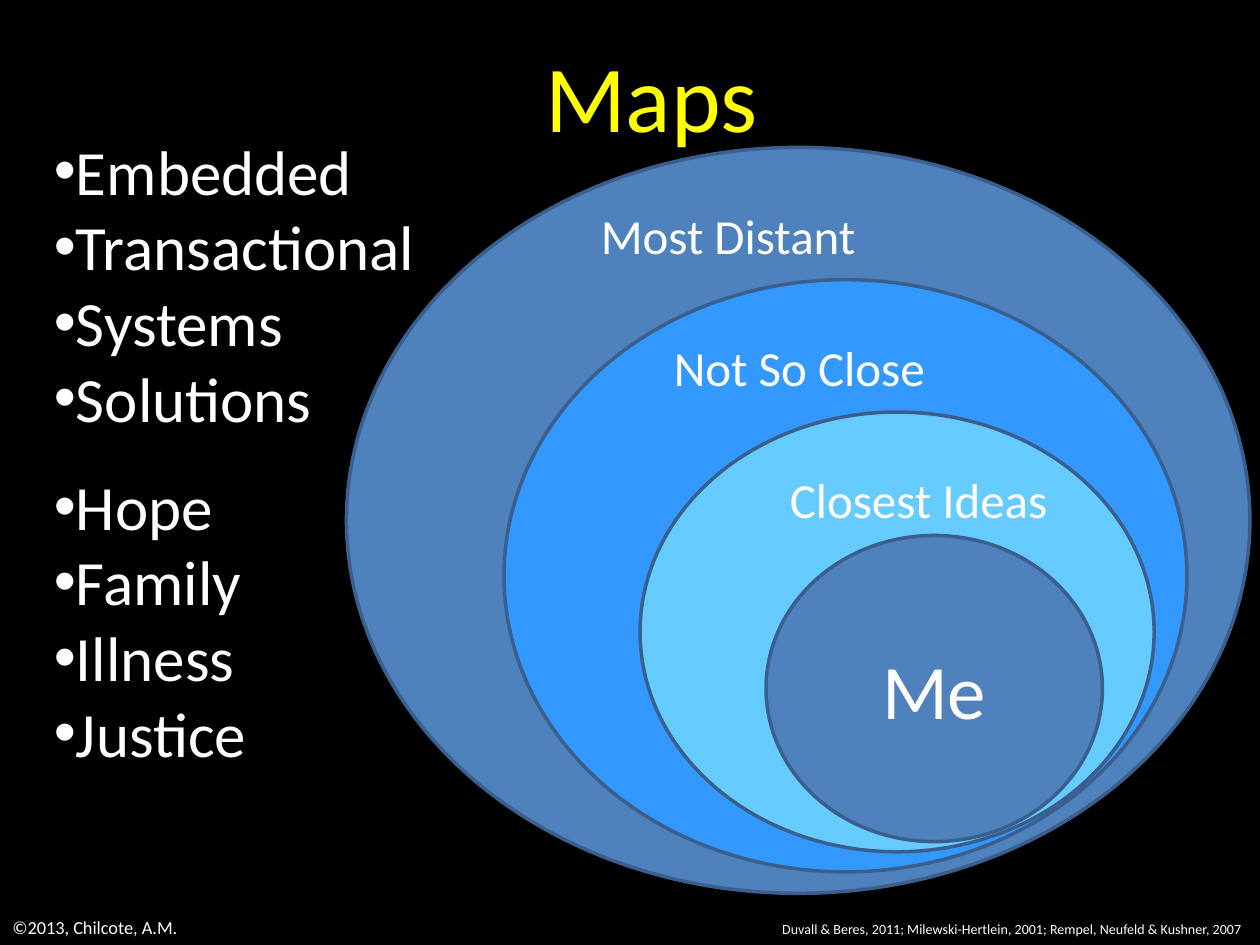
import pptx
import pptx.util
import pptx.dml.color
import pptx.enum.shapes
import pptx.enum.text
import pptx.oxml.ns
from lxml import etree

Inches, Pt = pptx.util.Inches, pptx.util.Pt
RGBColor = pptx.dml.color.RGBColor
ALIGN = pptx.enum.text.PP_ALIGN
ANCHOR = pptx.enum.text.MSO_ANCHOR

BLACK = RGBColor(0x00, 0x00, 0x00)
WHITE = RGBColor(0xFF, 0xFF, 0xFF)
YELLOW = RGBColor(0xFF, 0xFF, 0x00)
STEEL = RGBColor(0x4F, 0x81, 0xBD)
BRIGHT = RGBColor(0x33, 0x99, 0xFF)
SKY = RGBColor(0x66, 0xCC, 0xFF)
OUTLINE = RGBColor(0x3A, 0x5F, 0x8C)
FONT = "Calibri"

# Content: boxes are left, top, width, height in inches
TITLE = ("Maps", (0.17, 0.25, 10, 1))
RINGS = [  # outermost first
    ((2.75, 1.17, 7.17, 5.92), STEEL),
    ((4, 2.22, 5.42, 4.7), BRIGHT),
    ((5.08, 3.27, 4.08, 3.49), SKY),
    ((6.08, 4.25, 2.67, 2.43), STEEL),
]
CENTRE = "Me"
RING_LABELS = [
    ("Most Distant", (4.67, 1.58, 2.25, 0.56)),
    ("Not So Close", (5.25, 2.63, 2.21, 0.56)),
    ("Closest Ideas", (6.17, 3.68, 2.27, 0.56)),
]
BULLET_LISTS = [
    (["Embedded", "Transactional", "Systems", "Solutions"], 1),
    (["Hope", "Family", "Illness", "Justice"], 3.66),
]
FOOTERS = [
    ("©2013, Chilcote, A.M.", (0, 7.22, 1.57, 0.28), 10.5),
    ("Duvall & Beres, 2011; Milewski-Hertlein, 2001; "
     "Rempel, Neufeld & Kushner, 2007", (6.11, 7.26, 3.89, 0.24), 8),
]


def write(frame, text, size, color=WHITE, align=ALIGN.LEFT):
    frame.text = text
    for paragraph in frame.paragraphs:
        paragraph.alignment = align
        for run in paragraph.runs:
            run.font.name = FONT
            run.font.size = Pt(size)
            run.font.color.rgb = color


def add_text(slide, text, box, size, wrap=False, **style):
    frame = slide.shapes.add_textbox(*map(Inches, box)).text_frame
    frame.word_wrap = wrap
    write(frame, text, size, **style)
    return frame


def add_bullets(frame):
    for paragraph in frame.paragraphs:
        properties = paragraph._p.get_or_add_pPr()
        font = etree.SubElement(properties, pptx.oxml.ns.qn("a:buFont"))
        font.set("typeface", "Arial")
        bullet = etree.SubElement(properties, pptx.oxml.ns.qn("a:buChar"))
        bullet.set("char", "•")


def add_ring(slide, box, color):
    ring = slide.shapes.add_shape(
        pptx.enum.shapes.MSO_SHAPE.OVAL, *map(Inches, box))
    ring.shadow.inherit = False
    ring.fill.solid()
    ring.fill.fore_color.rgb = color
    ring.line.color.rgb = OUTLINE
    ring.line.width = Pt(2)
    return ring


def main():
    deck = pptx.Presentation()
    deck.slide_width, deck.slide_height = Inches(10), Inches(7.5)
    slide = deck.slides.add_slide(deck.slide_layouts[6])
    slide.background.fill.solid()
    slide.background.fill.fore_color.rgb = BLACK

    # Nested rings, the last one holding the centre word
    for box, color in RINGS:
        ring = add_ring(slide, box, color)
    ring.text_frame.vertical_anchor = ANCHOR.MIDDLE
    write(ring.text_frame, CENTRE, 44, align=ALIGN.CENTER)
    for label, box in RING_LABELS:
        add_text(slide, label, box, 28)

    # Bullet lists at the left
    for items, top in BULLET_LISTS:
        add_bullets(add_text(slide, "\n".join(items),
                             (0.33, top, 4.58, 2.52), 36, wrap=True))

    # Title and footers
    title = add_text(slide, *TITLE, 54, wrap=True,
                     color=YELLOW, align=ALIGN.CENTER)
    title.vertical_anchor = ANCHOR.MIDDLE
    for footer, box, size in FOOTERS:
        add_text(slide, footer, box, size)

    deck.save("out.pptx")


if __name__ == "__main__":
    main()
